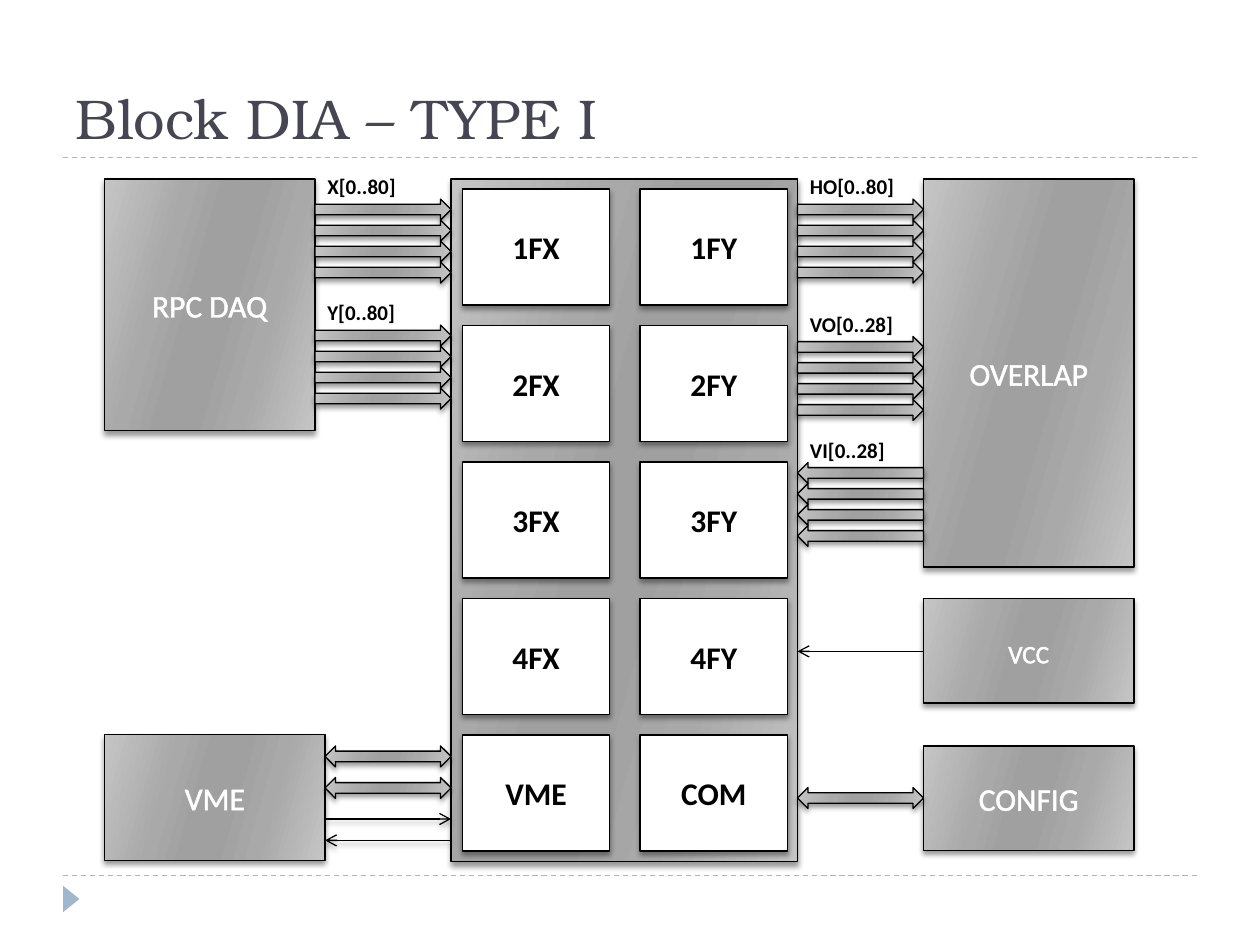
"""Draw the Type I block diagram slide."""
from dataclasses import dataclass

from lxml import etree
from pptx import Presentation
from pptx.dml.color import RGBColor
from pptx.enum.dml import MSO_LINE
from pptx.enum.shapes import MSO_CONNECTOR, MSO_SHAPE
from pptx.enum.text import MSO_ANCHOR, MSO_AUTO_SIZE, PP_ALIGN
from pptx.oxml import parse_xml
from pptx.oxml.ns import nsdecls, qn
from pptx.util import Inches, Pt

RECT, TRI = MSO_SHAPE.RECTANGLE, MSO_SHAPE.ISOSCELES_TRIANGLE
RIGHT, LEFT = MSO_SHAPE.RIGHT_ARROW, MSO_SHAPE.LEFT_ARROW
BOTH = MSO_SHAPE.LEFT_RIGHT_ARROW
STRAIGHT, DASH = MSO_CONNECTOR.STRAIGHT, MSO_LINE.DASH
MIDDLE, BOTTOM = MSO_ANCHOR.MIDDLE, MSO_ANCHOR.BOTTOM
CENTER, START = PP_ALIGN.CENTER, PP_ALIGN.LEFT
GROW, FIXED = MSO_AUTO_SIZE.SHAPE_TO_FIT_TEXT, MSO_AUTO_SIZE.NONE

BLACK = RGBColor(0x00, 0x00, 0x00)
WHITE = RGBColor(0xFF, 0xFF, 0xFF)
GREY = RGBColor(0x7D, 0x7D, 0x7D)
INK = RGBColor(0x46, 0x46, 0x53)
BLUE = RGBColor(0x9F, 0xB8, 0xCD)
LIGHT = RGBColor(0xC5, 0xC5, 0xC5)
MID = RGBColor(0xA9, 0xA9, 0xA9)
DARK = RGBColor(0xA0, 0xA0, 0xA0)
STOPS = [(0, LIGHT), (30, MID), (45, DARK), (55, DARK), (73, MID), (100, LIGHT)]

STEP = 1 / 6
CORE_L, CORE_R, SIDE = 3.58, 6.33, 7.33


@dataclass
class Block:
    text: str
    left: float
    top: float
    width: float
    height: float


@dataclass
class Bus:
    text: str
    left: float
    top: float
    width: float
    span: float
    kind: int


@dataclass
class Wire:
    start: float
    end: float
    y: float
    shade: bool


BLOCKS = [
    Block("", CORE_L, 1.42, 2.75, 5.42),
    Block("RPC DAQ", 0.83, 1.42, 1.67, 2),
    Block("VME", 0.83, 5.83, 1.75, 1),
    Block("OVERLAP", SIDE, 1.42, 1.67, 3.08),
    Block("CONFIG", SIDE, 5.92, 1.67, 0.83),
    Block("vcc", SIDE, 4.75, 1.67, 0.83),
]
CELLS = [("1FX", "1FY"), ("2FX", "2FY"), ("3FX", "3FY"), ("4FX", "4FY"), ("VME", "COM")]
BUSES = [
    Bus("X[0..80]", 2.5, 1.58, 1.08, 1, RIGHT),
    Bus("Y[0..80]", 2.5, 2.58, 1.08, 1, RIGHT),
    Bus("HO[0..80]", CORE_R, 1.58, 1, 1.17, RIGHT),
    Bus("VI[0..28]", CORE_R, 3.67, 1, 1.08, LEFT),
    Bus("VO[0..28]", CORE_R, 2.67, 1, 1.25, RIGHT),
]
LINKS = [(2.58, 5.92), (2.58, 6.17), (CORE_R, 6.25)]
WIRES = [
    Wire(2.58, CORE_L, 6.5, True),
    Wire(CORE_L, 2.58, 6.67, True),
    Wire(SIDE, CORE_R, 5.17, False),
]


def shade(shape) -> None:
    effect = shape._element.spPr.find(qn("a:effectLst"))
    effect.append(parse_xml(
        f'<a:outerShdw {nsdecls("a")} blurRad="{Pt(3)}" dist="{Pt(2)}" dir="5400000"'
        ' rotWithShape="0"><a:srgbClr val="000000"><a:alpha val="40000"/>'
        '</a:srgbClr></a:outerShdw>'))


def blend(shape) -> None:
    shape.fill.gradient()
    grad = shape._element.spPr.find(qn("a:gradFill"))
    stops = "".join(f'<a:gs pos="{pos * 1000}"><a:srgbClr val="{tone}"/></a:gs>'
                    for pos, tone in STOPS)
    grad.getparent().replace(grad, parse_xml(
        f'<a:gradFill {nsdecls("a")} rotWithShape="1"><a:gsLst>{stops}</a:gsLst>'
        f'<a:lin ang="{16 * 60000}" scaled="0"/></a:gradFill>'))


def write(shape, text: str, size: int, color: RGBColor, edge: RGBColor,
          width: float, bold: bool) -> None:
    shape.text_frame.text = text
    run = shape.text_frame.paragraphs[0].runs[0]
    font = run.font
    font.name, font.size, font.bold = "Calibri", Pt(size), bold
    font.color.rgb = color
    props = run._r.get_or_add_rPr()
    if text.islower():
        props.set("cap", "small")
    props.insert(0, parse_xml(
        f'<a:ln {nsdecls("a")} w="{Pt(width)}"><a:solidFill>'
        f'<a:srgbClr val="{edge}"/></a:solidFill></a:ln>'))


def add_form(slide, kind: int, left: float, top: float, width: float, height: float):
    shape = slide.shapes.add_shape(
        kind, Inches(left), Inches(top), Inches(width), Inches(height))
    shape.shadow.inherit = False
    shape.line.color.rgb, shape.line.width = BLACK, Pt(0.75)
    shade(shape)
    shape.text_frame.vertical_anchor = MIDDLE
    return shape


def add_block(slide, item: Block) -> None:
    shape = add_form(slide, RECT, item.left, item.top, item.width, item.height)
    blend(shape)
    if item.text:
        write(shape, item.text, 18, WHITE, WHITE, 1.45, False)
        shape.text_frame.paragraphs[0].alignment = CENTER


def add_cell(slide, text: str, col: int, row: int) -> None:
    shape = add_form(slide, RECT, 3.67 + col * 1.41, 1.5 + row * 6.5 * STEP, 1.17, 0.92)
    shape.fill.solid()
    shape.fill.fore_color.rgb = WHITE
    write(shape, text, 18, BLACK, GREY, 0.83, True)
    shape.text_frame.paragraphs[0].alignment = CENTER


def add_arrow(slide, kind: int, left: float, top: float, width: float) -> None:
    blend(add_form(slide, kind, left, top, width, STEP))


def add_bus(slide, bus: Bus) -> None:
    for lane in range(4):
        add_arrow(slide, bus.kind, bus.left, bus.top + lane * STEP, bus.width)
    label = slide.shapes.add_textbox(
        Inches(bus.left), Inches(bus.top - 0.25), Inches(bus.span), Inches(0.3))
    label.text_frame.word_wrap, label.text_frame.auto_size = True, GROW
    write(label, bus.text, 12, BLACK, GREY, 0.83, True)


def add_line(slide, start: float, end: float, y: float, color: RGBColor):
    line = slide.shapes.add_connector(
        STRAIGHT, Inches(start), Inches(y), Inches(end), Inches(y))
    line.line.color.rgb, line.line.width = color, Pt(0.75)
    etree.SubElement(line._element.spPr, qn("a:effectLst"))
    return line


def add_wire(slide, wire: Wire) -> None:
    line = add_line(slide, wire.start, wire.end, wire.y, BLACK)
    etree.SubElement(line.line._get_or_add_ln(), qn("a:tailEnd"), type="arrow")
    if wire.shade:
        shade(line)


def add_frame(slide) -> None:
    for y in (6.95, 1.25):
        add_line(slide, 0.5, 9.5, y, BLUE).line.dash_style = DASH
    mark = slide.shapes.add_shape(TRI, Inches(0.46), Inches(7.07), Inches(0.21), Inches(0.13))
    mark.rotation, mark.shadow.inherit = 90, False
    mark.fill.solid()
    mark.fill.fore_color.rgb = BLUE
    mark.line.fill.background()
    title = slide.shapes.title
    title.left, title.top = Inches(0.5), Inches(0.67)
    title.width, title.height = Inches(6.17), Inches(0.58)
    frame = title.text_frame
    frame.text = "Block DIA – TYPE I"
    frame.vertical_anchor, frame.auto_size = BOTTOM, FIXED
    frame.paragraphs[0].alignment = START
    font = frame.paragraphs[0].runs[0].font
    font.name, font.size, font.color.rgb = "TeX Gyre Bonum", Pt(32), INK


def main() -> None:
    deck = Presentation()
    deck.slide_width, deck.slide_height = Inches(10), Inches(7.5)
    slide = deck.slides.add_slide(deck.slide_layouts[5])
    add_frame(slide)
    for item in BLOCKS:
        add_block(slide, item)
    for row, names in enumerate(CELLS):
        for col, name in enumerate(names):
            add_cell(slide, name, col, row)
    for left, top in LINKS:
        add_arrow(slide, BOTH, left, top, 1)
    for wire in WIRES:
        add_wire(slide, wire)
    for bus in BUSES:
        add_bus(slide, bus)
    deck.save("out.pptx")


if __name__ == "__main__":
    main()
